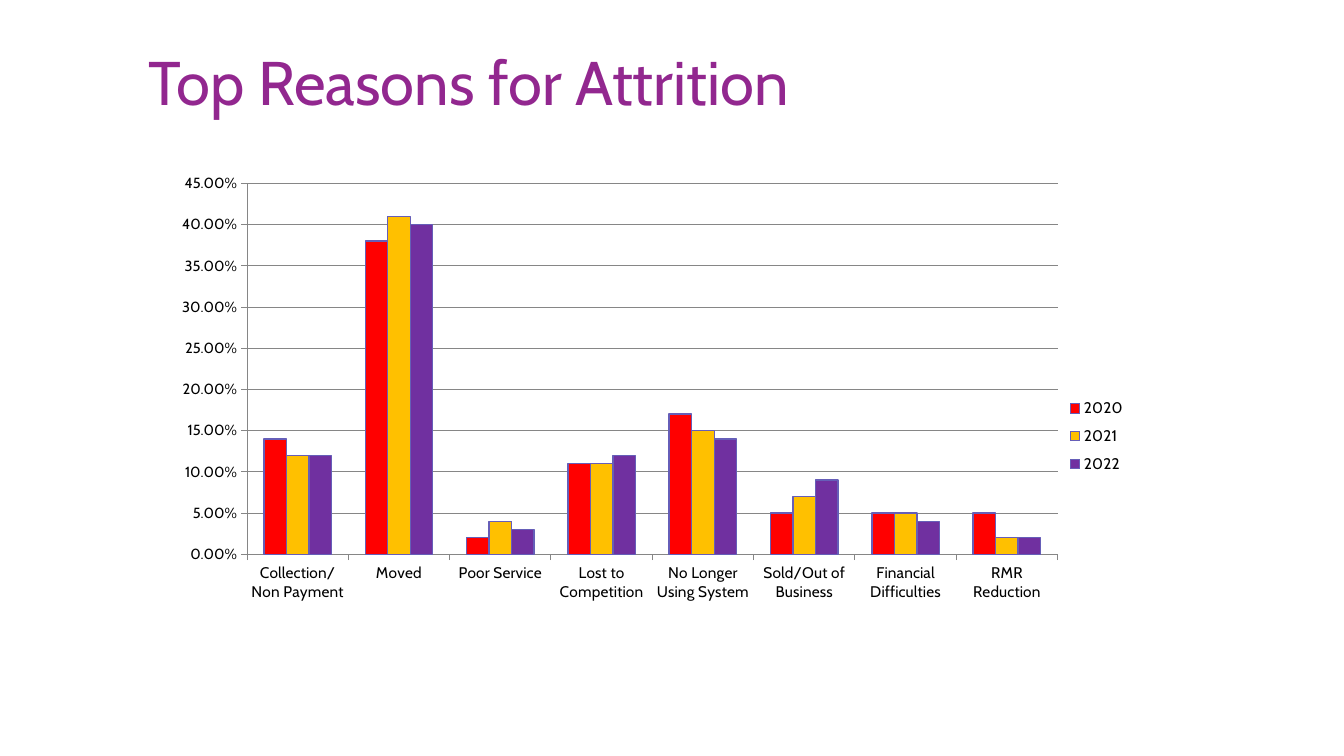
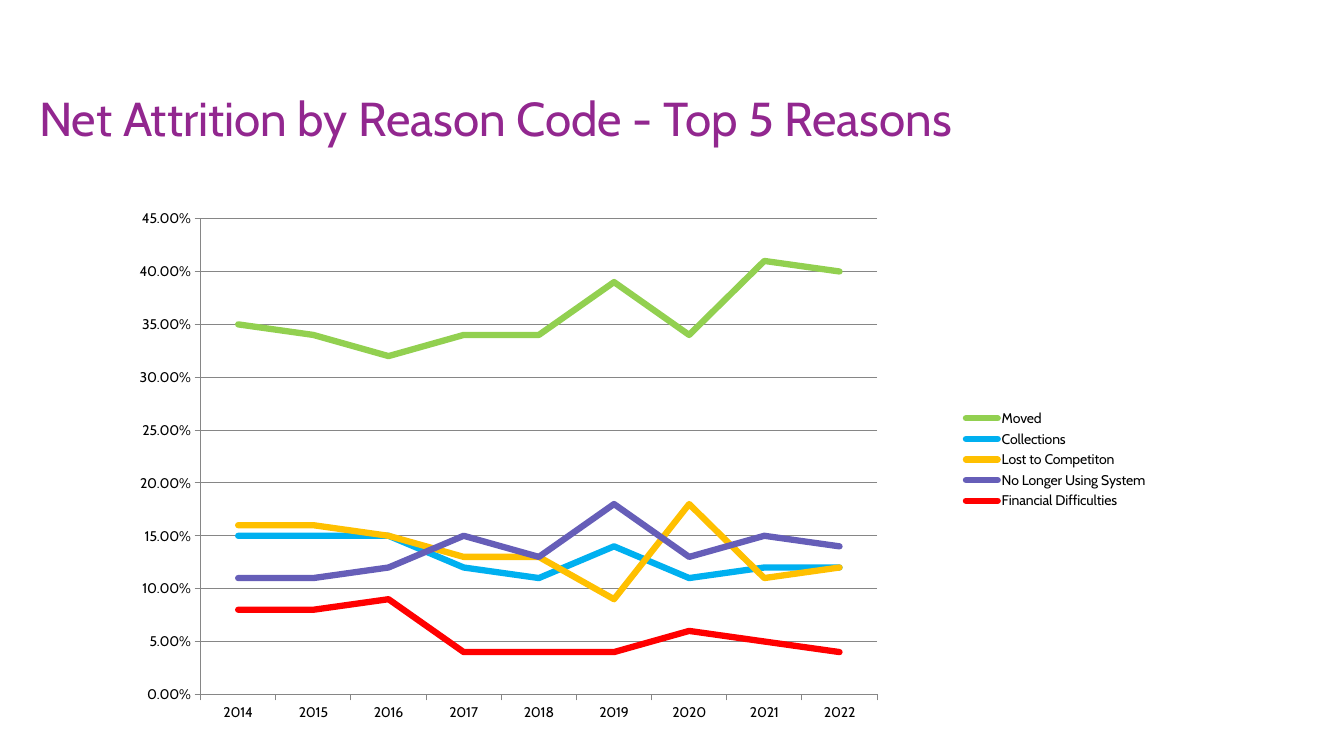
import pptx
import pptx.chart.data
import pptx.dml.color
import pptx.enum.chart
import pptx.enum.text
import pptx.oxml
import pptx.oxml.ns
import pptx.util

Inches = pptx.util.Inches
Pt = pptx.util.Pt
RGBColor = pptx.dml.color.RGBColor
ChartType = pptx.enum.chart.XL_CHART_TYPE
Align = pptx.enum.text.PP_ALIGN

FONT = "Cabin"
PERCENT = "0.00%"
PURPLE_TITLE = RGBColor(0x92, 0x27, 0x8F)
BLACK = RGBColor(0, 0, 0)
GRAY = RGBColor(0x86, 0x86, 0x86)
RED = RGBColor(0xFF, 0, 0)
AMBER = RGBColor(0xFF, 0xC0, 0)
PURPLE = RGBColor(0x70, 0x30, 0xA0)
GREEN = RGBColor(0x92, 0xD0, 0x50)
BLUE = RGBColor(0, 0xB0, 0xF0)
VIOLET = RGBColor(0x66, 0x5E, 0xB8)

REASONS = ["Collection/Non Payment", "Moved", "Poor Service", "Lost to Competition",
           "No Longer Using System", "Sold/Out of Business", "Financial Difficulties",
           "RMR Reduction"]
REASONS_BY_YEAR = [
    ("2020", RED, [0.14, 0.38, 0.02, 0.11, 0.17, 0.05, 0.05, 0.05]),
    ("2021", AMBER, [0.12, 0.41, 0.04, 0.11, 0.15, 0.07, 0.05, 0.02]),
    ("2022", PURPLE, [0.12, 0.4, 0.03, 0.12, 0.14, 0.09, 0.04, 0.02]),
]
YEARS = [str(year) for year in range(2014, 2023)]
YEARS_BY_REASON = [
    ("Moved", GREEN, [0.35, 0.34, 0.32, 0.34, 0.34, 0.39, 0.34, 0.41, 0.4]),
    ("Collections", BLUE, [0.15, 0.15, 0.15, 0.12, 0.11, 0.14, 0.11, 0.12, 0.12]),
    ("Lost to Competiton", AMBER,
     [0.16, 0.16, 0.15, 0.13, 0.13, 0.09, 0.18, 0.11, 0.12]),
    ("No Longer Using System", VIOLET,
     [0.11, 0.11, 0.12, 0.15, 0.13, 0.18, 0.13, 0.15, 0.14]),
    ("Financial Difficulties", RED,
     [0.08, 0.08, 0.09, 0.04, 0.04, 0.04, 0.06, 0.05, 0.04]),
]


def add_title(slide, box, text, size, align, line_spacing=1.0,
              right_inset=0.1, bottom_inset=0.05):
    frame = slide.shapes.add_textbox(*map(Inches, box)).text_frame
    frame.word_wrap = True
    frame.vertical_anchor = pptx.enum.text.MSO_ANCHOR.BOTTOM
    frame.margin_right = Inches(right_inset)
    frame.margin_bottom = Inches(bottom_inset)
    title = frame.paragraphs[0]
    title.text = text
    title.alignment = align
    title.line_spacing = line_spacing
    title.font.name = FONT
    title.font.size = Pt(size)
    title.font.color.rgb = PURPLE_TITLE


def place_in_chart(parent, index, chart_box, area, inner=False):
    _, _, width, height = chart_box
    fractions = [length / whole for length, whole in zip(area, (width, height) * 2)]
    target = '<c:layoutTarget val="inner"/>' if inner else ""
    modes = "".join(f'<c:{side}Mode val="edge"/>' for side in "xy")
    sizes = "".join(f'<c:{side} val="{value}"/>' for side, value in zip("xywh", fractions))
    for layout in parent.findall(pptx.oxml.ns.qn("c:layout")):
        parent.remove(layout)
    parent.insert(index, pptx.oxml.parse_xml(
        f'<c:layout {pptx.oxml.ns.nsdecls("c")}><c:manualLayout>'
        f"{target}{modes}{sizes}</c:manualLayout></c:layout>"))


def style_axis(axis, size):
    axis.format.line.color.rgb = GRAY
    axis.major_tick_mark = pptx.enum.chart.XL_TICK_MARK.OUTSIDE
    axis.tick_labels.font.size = Pt(size)


def add_percent_chart(slide, box, kind, categories, rows, plot_area, legend_area,
                      category_size=10, value_size=10, legend_size=10):
    data = pptx.chart.data.CategoryChartData(number_format=PERCENT)
    data.categories = categories
    for name, _, values in rows:
        data.add_series(name, values)
    chart = slide.shapes.add_chart(kind, *map(Inches, box), data).chart
    chart.has_title = False
    chart.font.name = FONT
    chart.font.size = Pt(10)
    chart.font.color.rgb = BLACK
    chart.plots[0].vary_by_categories = False

    style_axis(chart.category_axis, category_size)
    chart.category_axis.has_major_gridlines = False
    percent_axis = chart.value_axis
    style_axis(percent_axis, value_size)
    percent_axis.minimum_scale = 0
    percent_axis.maximum_scale = 0.45
    percent_axis.major_unit = 0.05
    percent_axis.has_major_gridlines = True
    percent_axis.major_gridlines.format.line.color.rgb = GRAY
    percent_axis.tick_labels.number_format = PERCENT
    percent_axis.tick_labels.number_format_is_linked = False

    chart.has_legend = True
    legend = chart.legend
    legend.position = pptx.enum.chart.XL_LEGEND_POSITION.RIGHT
    legend.include_in_layout = False
    legend.font.size = Pt(legend_size)
    place_in_chart(legend._element, 1, box, legend_area)
    place_in_chart(chart._chartSpace.chart.plotArea, 0, box, plot_area, inner=True)
    return chart


def build_top_reasons(slide):
    add_title(slide, (0.19, 0.33, 9.06, 0.89), "Top Reasons for Attrition", 44,
              Align.CENTER, right_inset=0.24)
    chart = add_percent_chart(
        slide, (1.17, 1.62, 10.51, 5.56), ChartType.COLUMN_CLUSTERED, REASONS,
        REASONS_BY_YEAR, (1.28, 0.2, 8.04, 3.68), (9.29, 2.25, 0.84, 0.92),
        category_size=11, value_size=10.5, legend_size=11)
    chart.plots[0].gap_width = 150
    chart.plots[0].overlap = 0
    for year, (_, color, _) in zip(chart.series, REASONS_BY_YEAR):
        year.invert_if_negative = False
        year.format.fill.solid()
        year.format.fill.fore_color.rgb = color
        year.format.line.color.rgb = VIOLET
        year.format.line.width = Pt(1)


def build_net_attrition(slide):
    add_title(slide, (0.29, 0.65, 10.77, 1.42),
              "Net Attrition by Reason Code - Top 5 Reasons", 34, Align.LEFT,
              line_spacing=0.9, bottom_inset=0.61)
    chart = add_percent_chart(
        slide, (1.06, 1.91, 10.43, 5.3), ChartType.LINE, YEARS, YEARS_BY_REASON,
        (0.93, 0.26, 6.71, 4.72), (8.42, 2.12, 1.98, 1.06))
    for reason, (_, color, _) in zip(chart.series, YEARS_BY_REASON):
        reason.smooth = False
        reason.marker.style = pptx.enum.chart.XL_MARKER_STYLE.NONE
        reason.format.line.color.rgb = color
        reason.format.line.width = Pt(4.5)
        reason.format.line._ln.set("cap", "rnd")


def main():
    deck = pptx.Presentation()
    deck.slide_width = Inches(13.33)
    deck.slide_height = Inches(7.5)
    for build in (build_top_reasons, build_net_attrition):
        build(deck.slides.add_slide(deck.slide_layouts[6]))
    deck.save("out.pptx")


if __name__ == "__main__":
    main()
